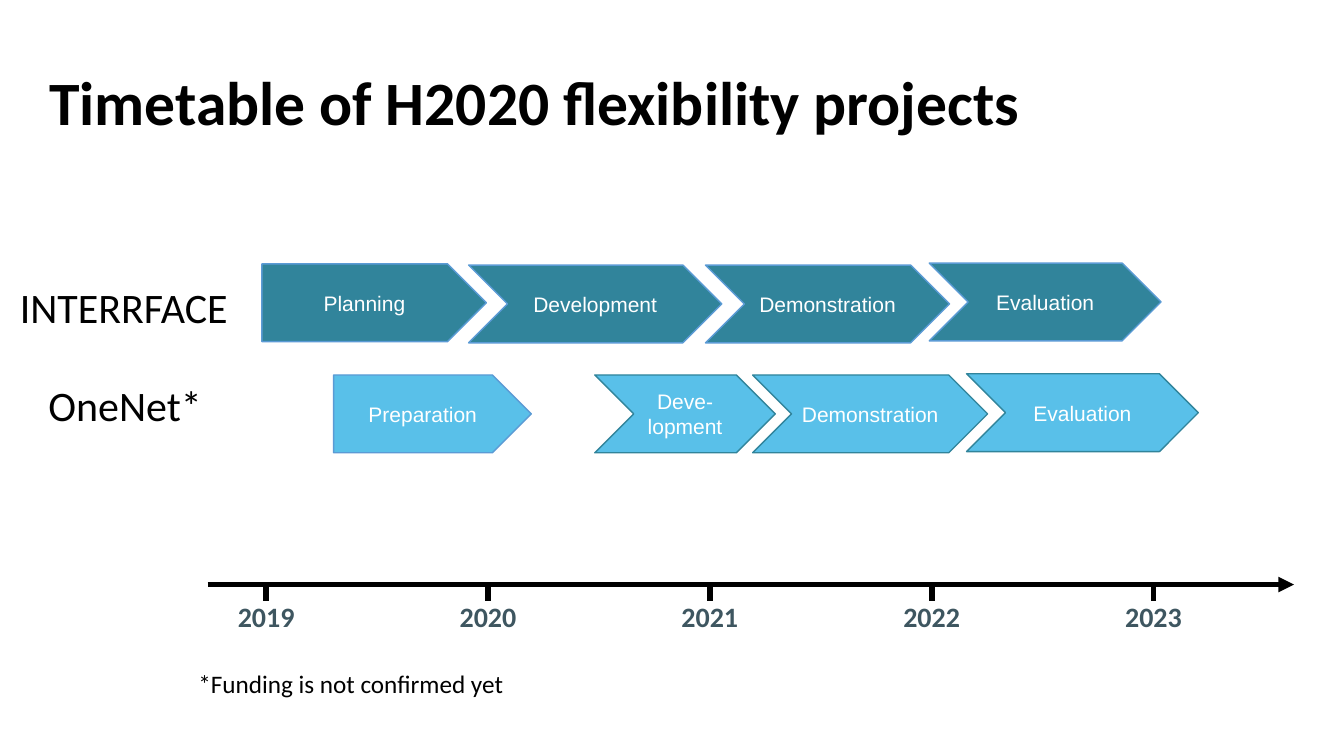
"""Build a timetable slide of H2020 flexibility projects."""
import pptx
import pptx.util
import pptx.dml.color
import pptx.enum.shapes
import pptx.enum.text
import pptx.oxml
import pptx.oxml.ns

Cm, Pt = pptx.util.Cm, pptx.util.Pt
RGB = pptx.dml.color.RGBColor
SHAPE = pptx.enum.shapes.MSO_SHAPE
ALIGN = pptx.enum.text.PP_ALIGN
ANCHOR = pptx.enum.text.MSO_ANCHOR

BLACK = RGB(0x00, 0x00, 0x00)
WHITE = RGB(0xFF, 0xFF, 0xFF)
TEAL = RGB(0x31, 0x84, 0x9B)
SKY = RGB(0x59, 0xC0, 0xE9)
BLUE = RGB(0x5B, 0x9B, 0xD5)
SLATE = RGB(0x3E, 0x56, 0x60)

TITLE = "Timetable of H2020 flexibility projects"
FOOTNOTE = "*Funding is not confirmed yet"
YEARS = ["2019", "2020", "2021", "2022", "2023"]

# Each project: name, label box, fill, phases as (text, left, top, width, edge)
PROJECTS = [
    ("INTERRFACE", (0.25, 6.96, 6.17, 1.55), TEAL, [
        ("Planning", 6.6, 6.65, 5.66, BLUE),
        ("Development", 11.81, 6.68, 6.38, BLUE),
        ("Demonstration", 17.78, 6.68, 6.15, BLUE),
        ("Evaluation", 23.42, 6.63, 5.84, BLUE),
    ]),
    ("OneNet*", (0.97, 9.45, 4.42, 1.55), SKY, [
        ("Preparation", 8.41, 9.45, 4.98, BLUE),
        ("Deve-lopment", 14.99, 9.45, 4.55, TEAL),
        ("Demonstration", 18.97, 9.45, 5.92, TEAL),
        ("Evaluation", 24.36, 9.42, 5.84, TEAL),
    ]),
]
PHASE_HEIGHT = 1.96
AXIS_LEFT, AXIS_RIGHT, AXIS_Y = 5.23, 32.61, 14.73
FIRST_TICK, YEAR_STEP, TICK_LENGTH = 6.71, 5.59, 0.41
YEAR_WIDTH, YEAR_TOP = 2.16, 14.99


def write(tf, text, size, color, font="Calibri", bold=False, align=ALIGN.LEFT):
    tf.text = text
    p = tf.paragraphs[0]
    p.alignment = align
    f = p.runs[0].font
    f.name, f.size, f.bold = font, Pt(size), bold
    f.color.rgb = color
    return p


def add_text(slide, box, text, size, color=BLACK, **style):
    tf = slide.shapes.add_textbox(*map(Cm, box)).text_frame
    tf.word_wrap = True
    write(tf, text, size, color, **style)
    return tf


def add_phase(slide, kind, fill, text, left, top, width, edge):
    sp = slide.shapes.add_shape(kind, Cm(left), Cm(top), Cm(width), Cm(PHASE_HEIGHT))
    sp.shadow.inherit = False
    sp.fill.solid()
    sp.fill.fore_color.rgb = fill
    sp.line.color.rgb = edge
    sp.line.width = Pt(1)
    tf = sp.text_frame
    tf.margin_left = tf.margin_right = 0
    tf.word_wrap = True
    tf.vertical_anchor = ANCHOR.MIDDLE
    write(tf, text, 15, WHITE, font="Arial", align=ALIGN.CENTER)


def add_line(slide, x1, y1, x2, y2, width, arrow=False):
    line = slide.shapes.add_connector(
        pptx.enum.shapes.MSO_CONNECTOR.STRAIGHT, Cm(x1), Cm(y1), Cm(x2), Cm(y2))
    line.line.color.rgb = BLACK
    line.line.width = Pt(width)
    if arrow:
        tail = pptx.oxml.parse_xml(
            "<a:tailEnd %s type='triangle'/>" % pptx.oxml.ns.nsdecls("a"))
        line.line._get_or_add_ln().append(tail)
    line._element.spPr.append(pptx.oxml.parse_xml(
        "<a:effectLst %s/>" % pptx.oxml.ns.nsdecls("a")))


def main():
    prs = pptx.Presentation()
    prs.slide_width, prs.slide_height = Cm(33.87), Cm(19.05)
    slide = prs.slides.add_slide(prs.slide_layouts[6])

    tf = add_text(slide, (0.99, 0.81, 29.21, 3.68), TITLE, 44, bold=True)
    tf.vertical_anchor = ANCHOR.MIDDLE
    tf.paragraphs[0].line_spacing = 0.9

    for name, box, fill, phases in PROJECTS:
        add_text(slide, box, name, 30)
        for i, phase in enumerate(phases):
            kind = SHAPE.CHEVRON if i else SHAPE.PENTAGON
            add_phase(slide, kind, fill, *phase)

    add_line(slide, AXIS_LEFT, AXIS_Y, AXIS_RIGHT, AXIS_Y, 3.75, arrow=True)
    for i, year in enumerate(YEARS):
        x = FIRST_TICK + i * YEAR_STEP
        add_line(slide, x, AXIS_Y, x, AXIS_Y + TICK_LENGTH, 4)
        add_text(slide, (x - YEAR_WIDTH / 2, YEAR_TOP, YEAR_WIDTH, 1.12), year, 20,
                 SLATE, bold=True, align=ALIGN.CENTER)

    add_text(slide, (4.75, 16.71, 8.6, 1.02), FOOTNOTE, 18)
    prs.save("out.pptx")


if __name__ == "__main__":
    main()
